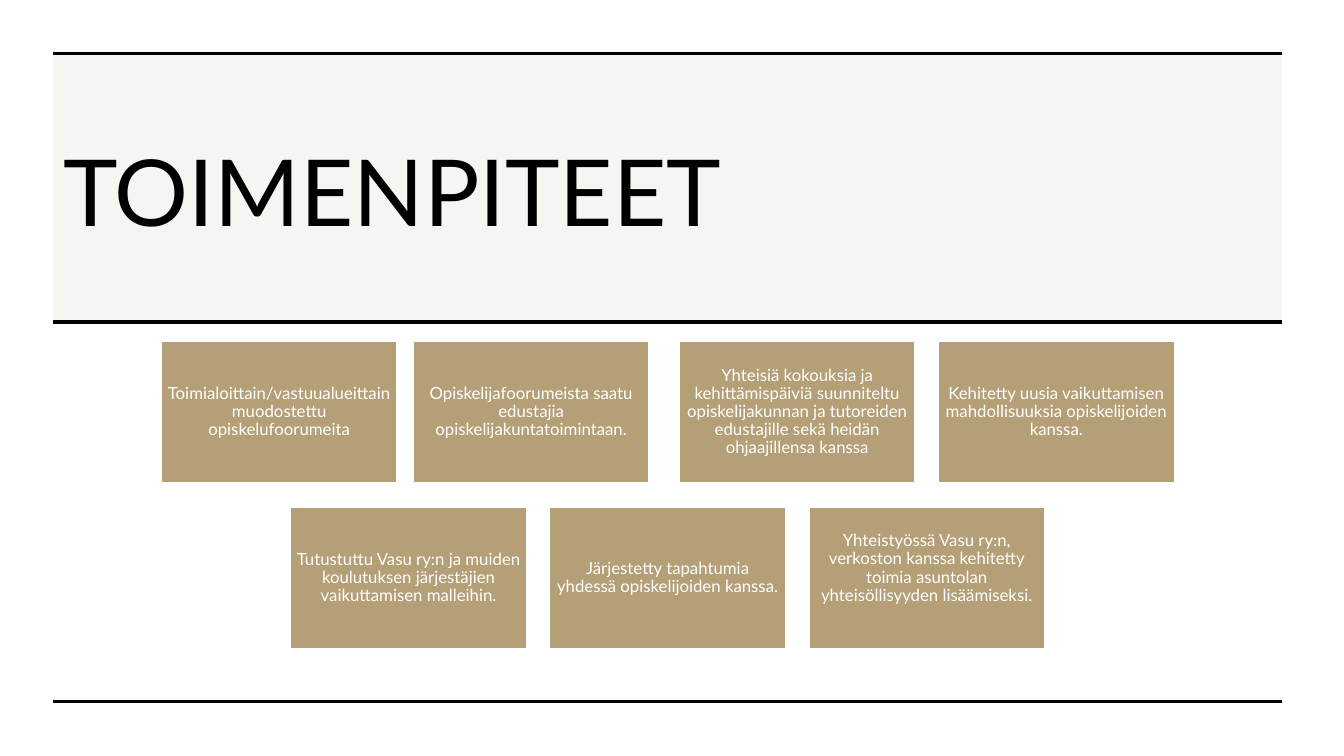
from lxml import etree
from pptx import Presentation
from pptx import util as u
from pptx.dml import color
from pptx.enum import shapes, text
from pptx.oxml import ns

COLOURS = {"gold": "B49F77", "black": "000000", "white": "FFFFFF"}
FONT = "Lato"

# Boxes on the slide: left, top, width, height in points
HEADER = (38, 38.5, 877.5, 191.5)
ACTIONS = (115.2, 244.1, 723.6, 219)
FOOTER_RULE_TOP = 501

CARD_WIDTH, CARD_HEIGHT = 168.5, 100.8
CARD_FRAME = {"word_wrap": True, "vertical_anchor": text.MSO_ANCHOR.MIDDLE,
              "margin_left": u.Pt(3.6), "margin_right": u.Pt(3.6),
              "margin_top": u.Pt(3.6), "margin_bottom": u.Pt(3.6)}
TITLE_FRAME = {"word_wrap": True, "vertical_anchor": text.MSO_ANCHOR.MIDDLE,
               "auto_size": text.MSO_AUTO_SIZE.NONE}

# Each card: text, shift to the right, extra space below the text
CARD_ROWS = [
    [("Toimialoittain/vastuualueittain muodostettu opiskelufoorumeita", 0, 0),
     ("Opiskelijafoorumeista saatu edustajia opiskelijakuntatoimintaan.", -5, 0),
     ("Yhteisiä kokouksia ja kehittämispäiviä suunniteltu opiskelijakunnan ja "
      "tutoreiden edustajille sekä heidän ohjaajillensa kanssa", 0, 0),
     ("Kehitetty uusia vaikuttamisen mahdollisuuksia opiskelijoiden kanssa.", 0, 0)],
    [("Tutustuttu Vasu ry:n ja muiden koulutuksen järjestäjien "
      "vaikuttamisen malleihin.", 0, 0),
     ("Järjestetty tapahtumia yhdessä opiskelijoiden kanssa.", 0, 0),
     ("Yhteistyössä Vasu ry:n, verkoston kanssa kehitetty toimia asuntolan "
      "yhteisöllisyyden lisäämiseksi.", 0, 13)],
]


def rgb(name):
    return color.RGBColor.from_string(COLOURS[name])


def apply_format(target, values):
    for name, value in values.items():
        setattr(target, name, value)


def write_text(shape, wording, frame_format, paragraph_format, size, colour):
    apply_format(shape.text_frame, frame_format)
    paragraph = shape.text_frame.paragraphs[0]
    apply_format(paragraph, paragraph_format)
    run = paragraph.add_run()
    run.text = wording
    apply_format(run.font, {"name": FONT, "size": u.Pt(size)})
    run.font.color.rgb = rgb(colour)


def add_rectangle(slide, box):
    rectangle = slide.shapes.add_shape(shapes.MSO_SHAPE.RECTANGLE, *map(u.Pt, box))
    rectangle.shadow.inherit = False
    rectangle.fill.solid()
    rectangle.fill.fore_color.rgb = rgb("gold")
    return rectangle


def add_rule(slide, left, top, width):
    rule = slide.shapes.add_connector(
        shapes.MSO_CONNECTOR.STRAIGHT, u.Pt(left), u.Pt(top), u.Pt(left + width), u.Pt(top))
    rule.line.width = u.Pt(2.25)
    rule.line.color.rgb = rgb("black")
    etree.SubElement(rule.element.spPr, ns.qn("a:effectLst"))


def build_header(slide, box, wording):
    left, top, width, height = box
    # Tinted band behind the title
    band = add_rectangle(slide, box)
    band.line.fill.background()
    tint = band.element.spPr.find(".//" + ns.qn("a:srgbClr"))
    etree.SubElement(tint, ns.qn("a:alpha"), val="10000")
    # Title
    title = slide.shapes.title
    title.element.addprevious(band.element)
    apply_format(title, {"left": u.Pt(left), "top": u.Pt(top + 38.5),
                         "width": u.Pt(816), "height": u.Pt(117.5)})
    write_text(title, wording, TITLE_FRAME, {"alignment": text.PP_ALIGN.LEFT}, 66, "black")
    # Rules above and below
    for rule_top in (top, top + height):
        add_rule(slide, left, rule_top, width)


def build_actions(slide, box, rows):
    left, top, width, height = box
    column_pitch = (width - CARD_WIDTH) / (len(rows[0]) - 1)
    row_pitch = (height - CARD_HEIGHT) / (len(rows) - 1)
    for row_number, row in enumerate(rows):
        # Each row is centred in the box
        row_left = left + (len(rows[0]) - len(row)) * column_pitch / 2
        for column, (wording, shift, space_below) in enumerate(row):
            card = add_rectangle(slide, (row_left + column * column_pitch + shift,
                                         top + row_number * row_pitch,
                                         CARD_WIDTH, CARD_HEIGHT))
            card.line.width = u.Pt(1)
            card.line.color.rgb = rgb("white")
            frame = {**CARD_FRAME, "margin_bottom": u.Pt(3.6 + space_below)}
            write_text(card, wording, frame,
                       {"alignment": text.PP_ALIGN.CENTER, "line_spacing": 0.9}, 12, "white")


def main():
    presentation = Presentation()
    apply_format(presentation, {"slide_width": u.Pt(960), "slide_height": u.Pt(540)})
    slide = presentation.slides.add_slide(presentation.slide_layouts[5])
    build_header(slide, HEADER, "TOIMENPITEET")
    build_actions(slide, ACTIONS, CARD_ROWS)
    # Closing rule at the foot of the slide
    add_rule(slide, HEADER[0], FOOTER_RULE_TOP, HEADER[2])
    presentation.save("out.pptx")


if __name__ == "__main__":
    main()
